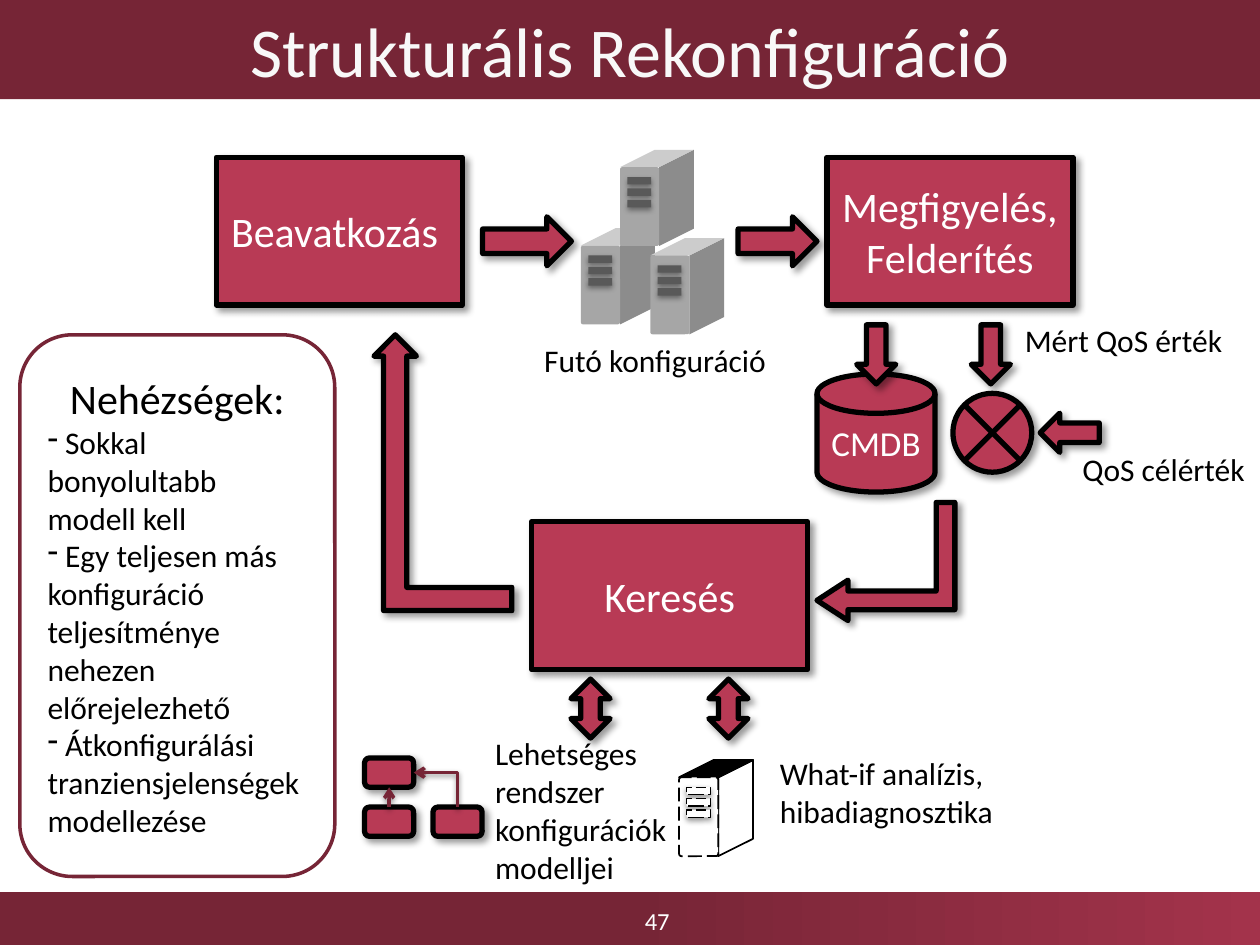
from lxml import etree
from pptx import Presentation
from pptx.dml.color import RGBColor
from pptx.enum.dml import MSO_LINE
from pptx.enum.shapes import MSO_CONNECTOR, MSO_SHAPE
from pptx.enum.text import MSO_ANCHOR, PP_ALIGN
from pptx.oxml.ns import qn
from pptx.util import Cm, Pt

BOX, ROUND = MSO_SHAPE.RECTANGLE, MSO_SHAPE.ROUNDED_RECTANGLE
RIGHT, LEFT = MSO_SHAPE.RIGHT_ARROW, MSO_SHAPE.LEFT_ARROW
DOWN, BOTH = MSO_SHAPE.DOWN_ARROW, MSO_SHAPE.UP_DOWN_ARROW
BENT, DISK = MSO_SHAPE.BENT_UP_ARROW, MSO_SHAPE.FLOWCHART_MAGNETIC_DISK
CROSS = MSO_SHAPE.FLOWCHART_SUMMING_JUNCTION
STRAIGHT, ELBOW = MSO_CONNECTOR.STRAIGHT, MSO_CONNECTOR.ELBOW
DASH = MSO_LINE.LONG_DASH
CENTER, START = PP_ALIGN.CENTER, PP_ALIGN.LEFT
MIDDLE = MSO_ANCHOR.MIDDLE

HEX = {
    "wine": "762536", "rose": "A3334B", "red": "B83A55", "pale": "F8F8F8",
    "white": "FFFFFF", "black": "000000", "front": "A6A6A6",
    "side": "8C8C8C", "top": "CCCCCC", "slot": "595959",
}
BLOCK = {"fill": "red", "line": "black", "width": 3, "shade": (40, 4, 3, 45)}
SLOT = (38, 3.1, 1.6, 90)


def tint(name):
    return RGBColor.from_string(HEX[name])


def put(item, vals):
    for key, val in vals.items():
        setattr(item, key, val)


def cast(item, shade=None):
    props = item._element.spPr
    for old in props.findall(qn("a:effectLst")):
        props.remove(old)
    root = etree.SubElement(props, qn("a:effectLst"))
    if shade:
        alpha, blur, dist, turn = shade
        glow = etree.SubElement(root, qn("a:outerShdw"), blurRad=str(Pt(blur)),
                                dist=str(Pt(dist)), dir=str(turn * 60000),
                                rotWithShape="0")
        color = etree.SubElement(glow, qn("a:srgbClr"), val=HEX["black"])
        etree.SubElement(color, qn("a:alpha"), val=str(alpha * 1000))


def paint(item, fill, line=None, width=1, shade=None, dash=None):
    item.fill.solid()
    item.fill.fore_color.rgb = tint(fill)
    if line:
        item.line.color.rgb = tint(line)
        put(item.line, {"width": Pt(width), "dash_style": dash})
    else:
        item.line.fill.background()
    cast(item, shade)


def style(para, size, color, align=CENTER):
    para.alignment = align
    put(para.font, {"size": Pt(size), "name": "Calibri"})
    para.font.color.rgb = tint(color)


def shape(shapes, kind, box, adj=(), **look):
    item = shapes.add_shape(kind, *map(Cm, box))
    for i, val in enumerate(adj):
        item.adjustments[i] = val
    paint(item, **look)
    return item


def block(slide, kind, box, text="", size=24, adj=()):
    item = shape(slide.shapes, kind, box, adj, **BLOCK)
    if text:
        put(item.text_frame, {"text": text, "word_wrap": True,
                              "vertical_anchor": MIDDLE})
        style(item.text_frame.paragraphs[0], size, "white")
    return item


def label(slide, box, text, size=18, color="black", align=START):
    item = slide.shapes.add_textbox(*map(Cm, box))
    put(item.text_frame, {"text": text, "word_wrap": False})
    for para in item.text_frame.paragraphs:
        style(para, size, color, align)
    return item


def title(slide, box, text):
    item = slide.shapes.title
    put(item, dict(zip(("left", "top", "width", "height"), map(Cm, box))))
    paint(item, "wine")
    put(item.text_frame, {"text": text, "vertical_anchor": MIDDLE})
    style(item.text_frame.paragraphs[0], 40, "pale")


def footer(slide, x, y, w, h):
    bar = shape(slide.shapes, BOX, (x, y, w, h), fill="wine")
    bar.fill.gradient()
    bar.fill.gradient_angle = 0
    for stop, (spot, name) in zip(bar.fill.gradient_stops, ((0.5, "wine"), (1, "rose"))):
        stop.position = spot
        stop.color.rgb = tint(name)
    page = label(slide, (x + 9.12, y + 0.08, 8.26, h - 0.08), "47", 14, "white", CENTER)
    page.text_frame.vertical_anchor = MIDDLE


def server(slide, x, y, front="front", side="side", top="top", slot="slot",
           line=None, dash=None):
    w, h, deep, rise = 0.79, 1.59, 0.7, 0.35
    parts = slide.shapes.add_group_shape().shapes
    far, high = x + w + deep, y - rise
    faces = (
        (side, ((x + w, y), (far, high), (far, high + h), (x + w, y + h))),
        (top, ((x, y), (x + deep, high), (far, high), (x + w, y))),
    )
    for name, pts in faces:
        pts = [(Cm(a), Cm(b)) for a, b in pts]
        path = parts.build_freeform(*pts[0])
        path.add_line_segments(pts[1:])
        paint(path.convert_to_shape(), name, line)
    shape(parts, ROUND, (x, y, w, h), (0.06,), fill=front, line=line, dash=dash)
    for i in range(3):
        shape(parts, BOX, (x + 0.15, y + 0.2 + i * 0.23, 0.48, 0.15), fill=slot,
              line=line, width=0.75, shade=SLOT, dash=dash)


def running(slide, x, y):
    for dx, dy in ((0.99, 1.78), (2.39, 1.98), (1.78, 0.2)):
        server(slide, x + dx, y + dy)
    label(slide, (x, y + 3.58, 5.03, 1.02), "Futó konfiguráció")


def steps(slide, x, y):
    block(slide, BOX, (x, y, 4.96, 2.98), "Beavatkozás ")
    block(slide, BOX, (x + 12.31, y, 4.96, 2.98), "Megfigyelés, Felderítés")
    for dx, w in ((5.37, 1.79), (10.52, 1.59)):
        block(slide, RIGHT, (x + dx, y + 1.2, w, 0.99))


def measure(slide, x, y):
    block(slide, DISK, (x, y + 0.99, 2.38, 2.38), "CMDB", 20)
    block(slide, CROSS, (x + 2.74, y + 1.38, 1.59, 1.59))
    for dx in (0.8, 3.11):
        block(slide, DOWN, (x + dx, y, 0.79, 1.19))
    block(slide, LEFT, (x + 4.5, y + 1.78, 1.19, 0.79))
    label(slide, (x + 3.94, y - 0.2, 4.55, 1.02), "Mért QoS érték")
    label(slide, (x + 5.1, y + 2.39, 3.84, 1.02), "QoS célérték")


def search(slide, x, y):
    block(slide, BOX, (x, y, 5.56, 2.98), "Keresés")
    for dx in (0.79, 3.57):
        block(slide, BOTH, (x + dx, y + 3.17, 0.79, 1.19))
    back = block(slide, BENT, (x + 5.95, y - 0.59, 2.38, 2.78), adj=(0.158, 0.171, 0.263))
    back.rotation = 270
    out = block(slide, BENT, (x - 3.18, y - 3.77, 2.78, 5.56), adj=(0.168, 0.154, 0.155))
    for item in (back, out):
        item._element.spPr.xfrm.set("flipH", "1")


def join(slide, kind, start, site, stop, end, tip):
    link = slide.shapes.add_connector(kind, 0, 0, 0, 0)
    link.begin_connect(start, site)
    link.end_connect(stop, end)
    link.line.color.rgb = tint("wine")
    link.line.width = Pt(2)
    etree.SubElement(link.line._get_or_add_ln(), qn("a:" + tip), type="arrow")
    cast(link, SLOT)
    return link


def models(slide, x, y):
    root, left, right = [block(slide, ROUND, (x + dx, y + dy, 0.99, 0.59))
                         for dx, dy in ((0, 0), (0, 0.99), (1.38, 0.99))]
    join(slide, STRAIGHT, left, 0, root, 2, "tailEnd")
    bend = join(slide, ELBOW, root, 3, right, 0, "headEnd")
    bend._element.spPr.find(qn("a:prstGeom")).set("prst", "bentConnector2")
    label(slide, (x + 2.38, y - 0.6, 4.01, 3.33),
          "Lehetséges \vrendszer\nkonfigurációk\nmodelljei")


def whatif(slide, x, y):
    server(slide, x, y, "white", "white", "black", "white", "black", DASH)
    label(slide, (x + 1.78, y - 0.59, 4.85, 1.8), "What-if analízis,\nhibadiagnosztika")


def note(slide, box, head, items):
    card = shape(slide.shapes, ROUND, box, fill="white", line="wine", width=2)
    frame = card.text_frame
    put(frame, {"text": head, "word_wrap": True, "vertical_anchor": MIDDLE})
    style(frame.paragraphs[0], 24, "black")
    for text in items:
        para = frame.add_paragraph()
        para.text = " " + text
        props = para._p.get_or_add_pPr()
        etree.SubElement(props, qn("a:buChar"), char="-")
        style(para, 18, "black", START)


def main():
    deck = Presentation()
    put(deck, {"slide_width": Cm(25.4), "slide_height": Cm(19.05)})
    slide = deck.slides.add_slide(deck.slide_layouts[5])
    footer(slide, 0, 17.98, 25.4, 1.07)
    title(slide, (0, 0, 25.4, 2), "Strukturális Rekonfiguráció")
    steps(slide, 4.36, 3.17)
    running(slide, 10.72, 3.17)
    measure(slide, 16.47, 6.55)
    search(slide, 10.72, 10.52)
    models(slide, 7.35, 15.28)
    whatif(slide, 13.69, 15.67)
    note(slide, (0.4, 6.75, 6.35, 10.92), "Nehézségek:", (
        "Sokkal bonyolultabb modell kell",
        "Egy teljesen más konfiguráció teljesítménye nehezen előrejelezhető",
        "Átkonfigurálási tranziensjelenségek modellezése",
    ))
    deck.save("out.pptx")


if __name__ == "__main__":
    main()
